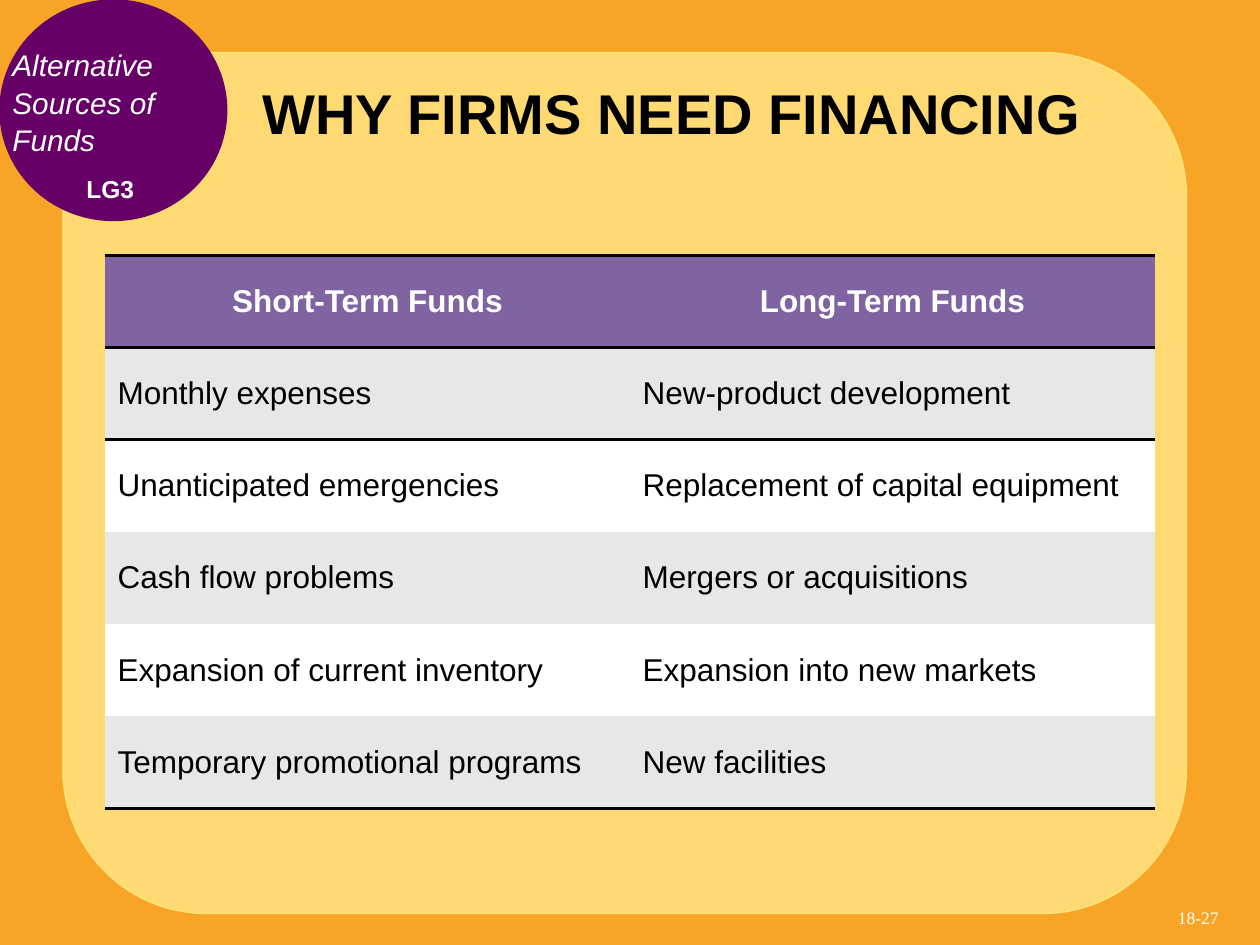
import pptx
import pptx.util
import pptx.dml.color
import pptx.enum.shapes
import pptx.enum.text
import pptx.oxml
import pptx.oxml.ns

Pt = pptx.util.Pt
Shape = pptx.enum.shapes.MSO_SHAPE
Align = pptx.enum.text.PP_ALIGN
Anchor = pptx.enum.text.MSO_ANCHOR


def color(hex_string):
    return pptx.dml.color.RGBColor.from_string(hex_string)


def write_text(frame, text, align, hex_string, font_format):
    para = frame.paragraphs[0]
    para.alignment = align
    span = para.add_run()
    span.text = text
    span.font.color.rgb = color(hex_string)
    for name, value in font_format.items():
        setattr(span.font, name, value)
    return para


deck = pptx.Presentation()
deck.slide_width, deck.slide_height = Pt(720), Pt(540)
page = deck.slides.add_slide(deck.slide_layouts[6])
page.background.fill.solid()
page.background.fill.fore_color.rgb = color("F7A427")

# Backdrop panel and corner circle
for kind, left, top, width, height, fill, line in [
    (Shape.ROUNDED_RECTANGLE, 36, 30, 642, 492, "FFDA73", "FFE679"),
    (Shape.OVAL, 0, 0, 129.6, 126, "660066", "660066"),
]:
    shape = page.shapes.add_shape(kind, Pt(left), Pt(top), Pt(width), Pt(height))
    shape.shadow.inherit = False
    shape.fill.solid()
    shape.fill.fore_color.rgb = color(fill)
    shape.line.color.rgb = color(line)
    shape.line.width = Pt(0.75)

# Title, circle labels and page number
for text, left, top, width, height, anchor, align, spacing, ink, font_format in [
    ("WHY FIRMS NEED FINANCING", 77.8, 5.8, 612, 116, Anchor.MIDDLE, Align.CENTER, 1,
     "000000", {"name": "Arial", "size": Pt(32), "bold": True}),
    ("LG3", 36, 96, 54, 24.5, Anchor.TOP, Align.CENTER, 1,
     "FFFFFF", {"name": "Arial", "size": Pt(14), "bold": True}),
    ("Alternative Sources of Funds", 0, 22.3, 117.4, 68.4, Anchor.TOP, Align.LEFT, 1.05,
     "FFFFFF", {"name": "Arial", "size": Pt(17), "italic": True}),
    ("18-27", 666, 514.8, 48, 19.4, Anchor.TOP, Align.LEFT, 1,
     "FFFFFF", {"name": "Times New Roman", "size": Pt(10)}),
]:
    box = page.shapes.add_textbox(Pt(left), Pt(top), Pt(width), Pt(height))
    box.text_frame.word_wrap = True
    box.text_frame.vertical_anchor = anchor
    para = write_text(box.text_frame, text, align, ink, font_format)
    para.line_spacing = spacing

# Funds table
funds = [
    ("Short-Term Funds", "Long-Term Funds"),
    ("Monthly expenses", "New-product development"),
    ("Unanticipated emergencies", "Replacement of capital equipment"),
    ("Cash flow problems", "Mergers or acquisitions"),
    ("Expansion of current inventory", "Expansion into new markets"),
    ("Temporary promotional programs", "New facilities"),
]
last = len(funds) - 1
row_height = 52.7
table = page.shapes.add_table(len(funds), 2, Pt(60), Pt(145.8), Pt(600),
                              Pt(row_height * len(funds))).table
table.first_row = table.horz_banding = False
# Style without borders or fills
table._tbl.tblPr.find(pptx.oxml.ns.qn("a:tableStyleId")).text = (
    "{2D5ABB26-0587-4C30-8999-92F81FD0307C}")
borders = {0: ("lnT", "lnB"), 1: ("lnT",), last: ("lnB",)}

for row, texts in enumerate(funds):
    table.rows[row].height = Pt(row_height)
    header = row == 0
    fill = "8064A2" if header else ("E7E7E7" if row % 2 else "FFFFFF")
    for column, text in enumerate(texts):
        cell = table.cell(row, column)
        cell.vertical_anchor = Anchor.MIDDLE
        # Border lines come before the fill in the cell properties
        for edge in borders.get(row, ()):
            cell._tc.get_or_add_tcPr().append(pptx.oxml.parse_xml(
                f'<a:{edge} {pptx.oxml.ns.nsdecls("a")} w="{Pt(2)}"><a:solidFill>'
                f'<a:srgbClr val="000000"/></a:solidFill></a:{edge}>'))
        cell.fill.solid()
        cell.fill.fore_color.rgb = color(fill)
        write_text(cell.text_frame, text, Align.CENTER if header else Align.LEFT,
                   "FFFFFF" if header else "000000",
                   {"name": "Arial", "size": Pt(18), "bold": header})

deck.save("out.pptx")
